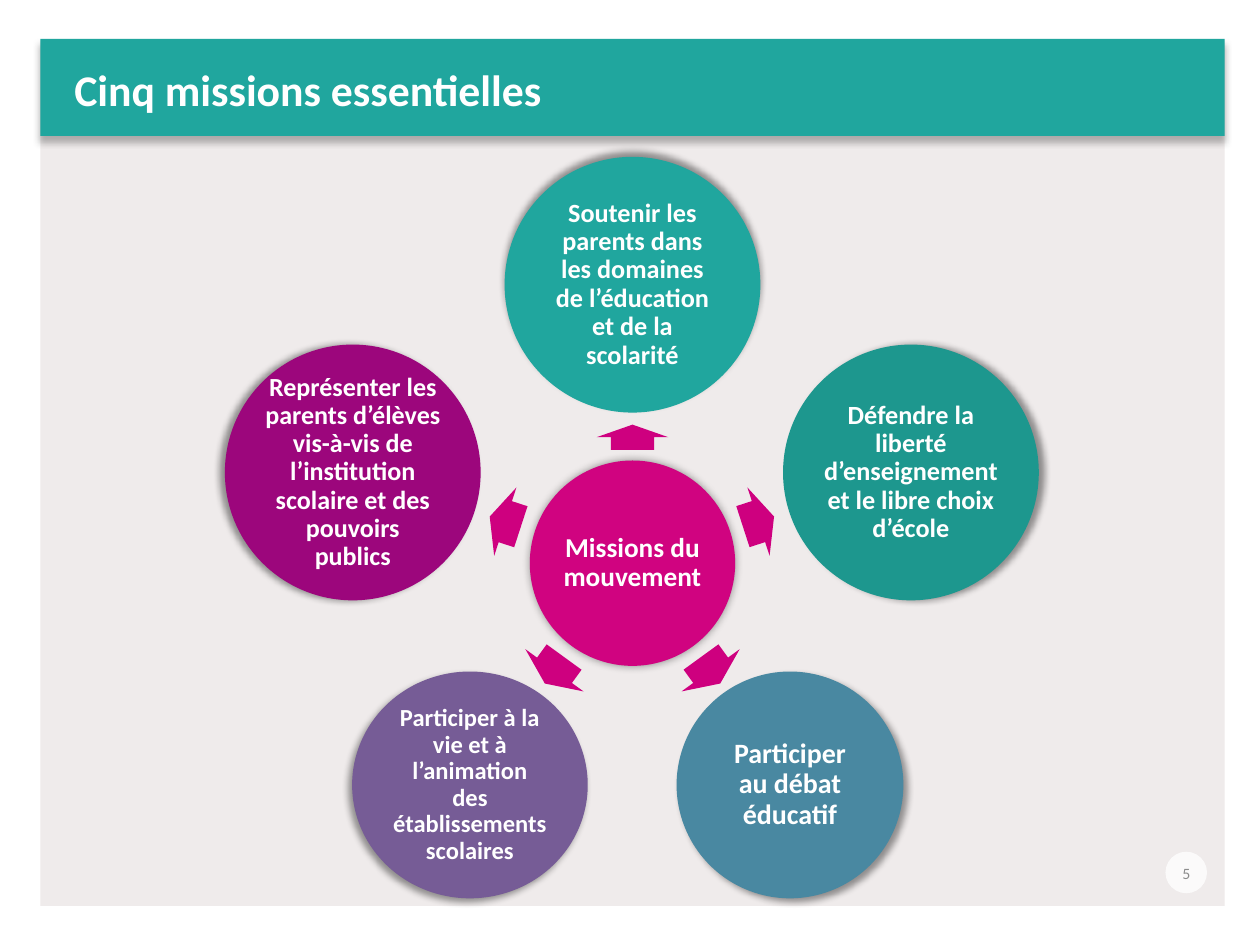
"""Build the slide showing five missions around a central circle."""
from math import sqrt

from lxml.etree import SubElement
from pptx import Presentation
from pptx.dml.color import RGBColor
from pptx.enum.shapes import MSO_SHAPE
from pptx.enum.text import MSO_ANCHOR, PP_ALIGN
from pptx.oxml.ns import qn
from pptx.util import Inches, Pt

FONT = "Calibri"
WHITE = RGBColor(0xFF, 0xFF, 0xFF)
PANEL = RGBColor(0xEF, 0xEB, 0xEB)
TEAL = RGBColor(0x20, 0xA6, 0x9E)
DARK_TEAL = RGBColor(0x1D, 0x97, 0x8E)
BLUE = RGBColor(0x49, 0x88, 0xA1)
VIOLET = RGBColor(0x76, 0x5C, 0x96)
PURPLE = RGBColor(0x9C, 0x06, 0x7C)
PINK = RGBColor(0xD0, 0x03, 0x80)
ARROW_PINK = RGBColor(0xCE, 0x00, 0x7F)
GREY = RGBColor(0x8C, 0x8C, 0x8C)

TITLE = "Cinq missions essentielles"
PAGE_NUMBER = "5"
HUB = ("Missions du mouvement", (5.02, 4.47), (1.63, 1.63), 15.6, PINK)
MISSIONS = [
    ("Soutenir les parents dans les domaines de l’éducation et de la scolarité",
     (5.02, 2.26), (2.03, 2.03), 15, TEAL, 270),
    ("Défendre la liberté d’enseignement et le libre choix d’école",
     (7.23, 3.75), (2.03, 2.03), 15, DARK_TEAL, 0),
    ("Participer au débat éducatif",
     (6.27, 6.23), (1.8, 1.8), 16, BLUE, 45),
    ("Participer à la vie et à l’animation des établissements scolaires",
     (3.73, 6.23), (1.87, 1.8), 14, VIOLET, 135),
    ("Représenter les parents d’élèves vis-à-vis de l’institution scolaire et des pouvoirs publics",
     (2.8, 3.75), (2.03, 2.03), 14.9, PURPLE, 180),
]
ARROWS = [
    ((5.02, 3.47), 0.2),
    ((6.02, 4.14), 0.26),
    ((5.64, 5.32), 0.26),
    ((4.4, 5.32), 0.26),
    ((4.01, 4.14), 0.26),
]
ARROW_HEIGHT = 0.57
HUB_INSET, MISSION_INSET = 0.26, 0.32


def add_filled(slide, preset, left, top, width, height, color):
    shape = slide.shapes.add_shape(
        preset, Inches(left), Inches(top), Inches(width), Inches(height))
    shape.shadow.inherit = False
    shape.fill.solid()
    shape.fill.fore_color.rgb = color
    shape.line.fill.background()
    return shape


def add_centered(slide, preset, center, size, color):
    (x, y), (width, height) = center, size
    return add_filled(slide, preset, x - width / 2, y - height / 2, width, height, color)


def add_shadow(shape, color, opacity, blur, distance, angle):
    effects = shape.element.spPr.find(qn("a:effectLst"))
    shadow = SubElement(
        effects, qn("a:outerShdw"), blurRad=str(Pt(blur)), dist=str(Pt(distance)),
        dir=str(angle * 60000), algn="ctr", rotWithShape="0")
    tone = SubElement(shadow, qn("a:srgbClr"), val=color)
    SubElement(tone, qn("a:alpha"), val=str(opacity * 1000))


def write(frame, text, size, color, bold=False, align=PP_ALIGN.CENTER):
    frame.word_wrap = True
    frame.text = text
    paragraph = frame.paragraphs[0]
    paragraph.alignment = align
    font = paragraph.runs[0].font
    font.name, font.size, font.bold = FONT, Pt(size), bold
    font.color.rgb = color
    return paragraph


def add_circle(slide, text, center, size, points, color, inset):
    circle = add_centered(slide, MSO_SHAPE.OVAL, center, size, color)
    frame = circle.text_frame
    side, upright = (inset - length * (1 - 1 / sqrt(2)) / 2 for length in size)
    frame.margin_left = frame.margin_right = Inches(side)
    frame.margin_top = frame.margin_bottom = Inches(upright)
    frame.vertical_anchor = MSO_ANCHOR.MIDDLE
    write(frame, text, points, WHITE, bold=True).line_spacing = 0.9
    return circle


def add_frame(slide):
    add_filled(slide, MSO_SHAPE.RECTANGLE, 0.32, 0.32, 9.4, 6.87, PANEL)
    band = add_filled(slide, MSO_SHAPE.RECTANGLE, 0.32, 0.31, 9.4, 0.77, TEAL)
    add_shadow(band, "595959", 43, 4, 3, 96)

    title = slide.shapes.title
    title.left, title.top, title.width, title.height = map(Inches, (0.49, 0.45, 9, 0.81))
    title.text_frame.vertical_anchor = MSO_ANCHOR.TOP
    write(title.text_frame, TITLE, 25, WHITE, bold=True, align=PP_ALIGN.LEFT)
    title.element.getparent().append(title.element)

    badge = add_filled(slide, MSO_SHAPE.OVAL, 9.25, 6.76, 0.33, 0.33, WHITE)
    tone = badge.element.spPr.find(qn("a:solidFill"))[0]
    SubElement(tone, qn("a:alpha"), val="78000")
    number = slide.shapes.add_textbox(Inches(8.25), Inches(6.73), Inches(2.33), Inches(0.4))
    number.text_frame.vertical_anchor = MSO_ANCHOR.MIDDLE
    write(number.text_frame, PAGE_NUMBER, 9, GREY)


def add_missions(slide):
    hub = add_circle(slide, *HUB, HUB_INSET)
    add_shadow(hub, "000000", 40, 5, 0, 0)
    turn = 360 / len(MISSIONS)
    for index, (mission, (center, width)) in enumerate(zip(MISSIONS, ARROWS)):
        arrow = add_centered(
            slide, MSO_SHAPE.RIGHT_ARROW, center, (width, ARROW_HEIGHT), ARROW_PINK)
        arrow.adjustments[0], arrow.adjustments[1] = 0.6, 0.5
        arrow.rotation = (270 + index * turn) % 360
        *content, shadow_angle = mission
        circle = add_circle(slide, *content, MISSION_INSET)
        add_shadow(circle, "000000", 40, 4, 3, shadow_angle)


def main():
    deck = Presentation()
    deck.slide_width, deck.slide_height = Inches(10), Inches(7.5)
    slide = deck.slides.add_slide(deck.slide_layouts[5])
    add_frame(slide)
    add_missions(slide)
    deck.save("out.pptx")


if __name__ == "__main__":
    main()
